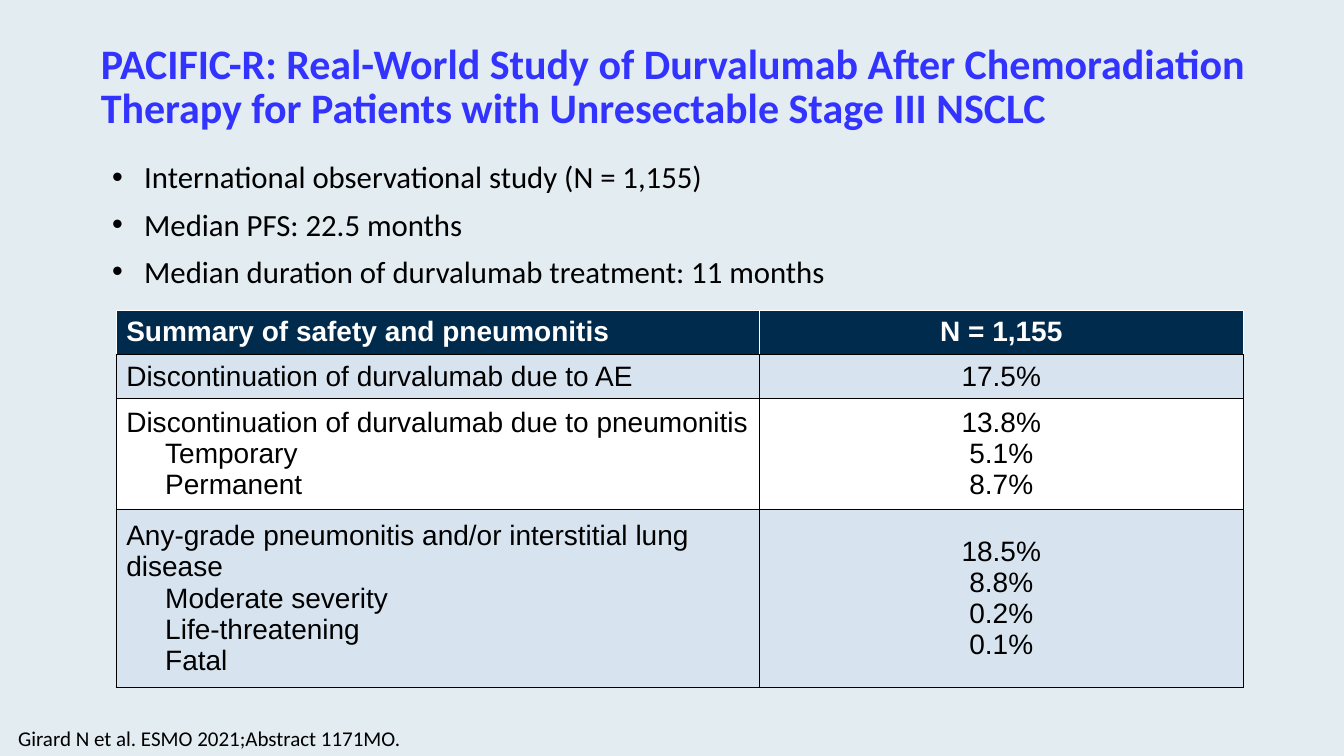
from dataclasses import dataclass

from lxml.etree import SubElement
from pptx import Presentation
from pptx.dml.color import RGBColor
from pptx.enum.text import MSO_ANCHOR, PP_ALIGN
from pptx.oxml.ns import qn
from pptx.util import Pt

BLACK, WHITE, NAVY, PALE, BLUE = "000000", "FFFFFF", "012B4D", "D7E4EF", "3333FF"


@dataclass
class SafetyRow:
    labels: list[str]  # the first label is flush left, the rest are indented
    values: list[str]
    height: float
    fill: str
    header: bool = False


BULLETS = [
    "International observational study (N = 1,155)",
    "Median PFS: 22.5 months",
    "Median duration of durvalumab treatment: 11 months",
]
SAFETY_ROWS = [
    SafetyRow(["Summary of safety and pneumonitis"], ["N = 1,155"], 29.5, NAVY, True),
    SafetyRow(["Discontinuation of durvalumab due to AE"], ["17.5%"], 29.5, PALE),
    SafetyRow(["Discontinuation of durvalumab due to pneumonitis", "Temporary", "Permanent"],
              ["13.8%", "5.1%", "8.7%"], 74, WHITE),
    SafetyRow(["Any-grade pneumonitis and/or interstitial lung disease",
               "Moderate severity", "Life-threatening", "Fatal"],
              ["18.5%", "8.8%", "0.2%", "0.1%"], 118.5, PALE),
]
COLUMN_WIDTHS = [459.5, 345.5]


def color(value: str) -> RGBColor:
    return RGBColor.from_string(value)


def write(frame, text: str, *, size: float, font="Calibri", ink=BLACK, bold=False,
          align=PP_ALIGN.LEFT, spacing=None, before=0, indent=0, hanging=0, bullet=None) -> None:
    """Fill the first paragraph of a frame, or add one if it already has text."""
    first = not frame.text
    para = frame.paragraphs[0] if first else frame.add_paragraph()
    para.alignment = align
    para.line_spacing = spacing
    para.space_before = Pt(0 if first else before)
    properties = para._p.get_or_add_pPr()
    if indent:
        properties.set("marL", str(Pt(indent)))
        properties.set("indent", str(Pt(-hanging)))
    if bullet:
        tint = SubElement(properties, qn("a:buClr"))
        SubElement(tint, qn("a:srgbClr"), val=BLACK)
        SubElement(properties, qn("a:buFont"), typeface="Arial")
        SubElement(properties, qn("a:buChar"), char=bullet)
    span = para.add_run()
    span.text = text
    span.font.name, span.font.size, span.font.bold = font, Pt(size), bold
    span.font.color.rgb = color(ink)


def add_frame(page, left: float, top: float, width: float, height: float,
              *, inset=True, anchor=MSO_ANCHOR.TOP):
    frame = page.shapes.add_textbox(Pt(left), Pt(top), Pt(width), Pt(height)).text_frame
    frame.word_wrap = True
    frame.vertical_anchor = anchor
    if not inset:
        frame.margin_left = frame.margin_right = frame.margin_top = frame.margin_bottom = 0
    return frame


def style_cell(cell, row: SafetyRow) -> None:
    properties = cell._tc.get_or_add_tcPr()
    for side in "LRTB":
        line = SubElement(properties, qn(f"a:ln{side}"), w=str(Pt(1)))
        fill = SubElement(line, qn("a:solidFill"))
        ink = WHITE if row.header and side != "B" else BLACK
        SubElement(fill, qn("a:srgbClr"), val=ink)
    cell.fill.solid()
    cell.fill.fore_color.rgb = color(row.fill)
    cell.vertical_anchor = MSO_ANCHOR.TOP if row.header else MSO_ANCHOR.MIDDLE


def add_safety_table(page, left: float, top: float) -> None:
    height = sum(row.height for row in SAFETY_ROWS)
    table = page.shapes.add_table(len(SAFETY_ROWS), len(COLUMN_WIDTHS), Pt(left), Pt(top),
                                  Pt(sum(COLUMN_WIDTHS)), Pt(height)).table
    table.first_row = table.horz_banding = False
    for column, width in zip(table.columns, COLUMN_WIDTHS):
        column.width = Pt(width)
    for index, row in enumerate(SAFETY_ROWS):
        table.rows[index].height = Pt(row.height)
        label_cell, value_cell = table.cell(index, 0), table.cell(index, 1)
        look = dict(size=20, font="Arial", ink=WHITE if row.header else BLACK, bold=row.header)
        for cell in (label_cell, value_cell):
            style_cell(cell, row)
        for position, label in enumerate(row.labels):
            write(label_cell.text_frame, label, indent=27.8 if position else 0, **look)
        for value in row.values:
            write(value_cell.text_frame, value, align=PP_ALIGN.CENTER, **look)


def main() -> None:
    deck = Presentation()
    deck.slide_width, deck.slide_height = Pt(960), Pt(540)
    page = deck.slides.add_slide(deck.slide_layouts[6])
    page.background.fill.solid()
    page.background.fill.fore_color.rgb = color("E2ECF1")

    # Title
    title = add_frame(page, 72, 18, 834, 90, inset=False, anchor=MSO_ANCHOR.MIDDLE)
    write(title, "PACIFIC-R: Real-World Study of Durvalumab After Chemoradiation Therapy "
          "for Patients with Unresectable Stage III NSCLC",
          size=30, ink=BLUE, bold=True, spacing=0.88)

    # Study facts
    facts = add_frame(page, 72, 111.6, 816, 96.5, inset=False)
    for fact in BULLETS:
        write(facts, fact, size=22, spacing=1.05, before=6, indent=31, hanging=23, bullet="•")

    # Safety table
    add_safety_table(page, 83, 222)

    # Citation
    citation = add_frame(page, 5.8, 514.8, 872.6, 25.2)
    write(citation, "Girard N et al. ESMO 2021;Abstract 1171MO.", size=15)

    deck.save("out.pptx")


if __name__ == "__main__":
    main()
